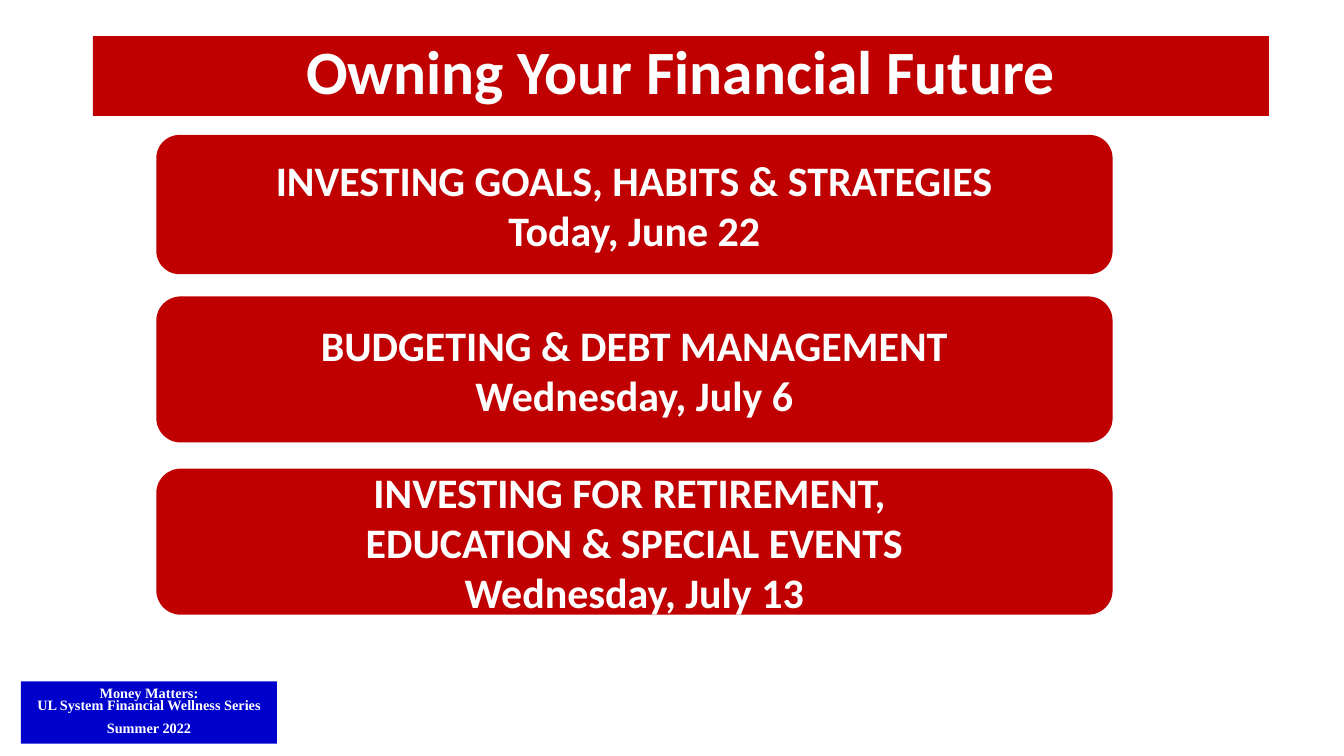
from pptx import Presentation
from pptx.dml.color import RGBColor
from pptx.enum.shapes import MSO_SHAPE
from pptx.enum.text import MSO_ANCHOR, MSO_AUTO_SIZE, PP_ALIGN
from pptx.util import Cm, Pt

RED = RGBColor(0xC0, 0x00, 0x00)
BLUE = RGBColor(0x00, 0x00, 0xCC)
WHITE = RGBColor(0xFF, 0xFF, 0xFF)
RECT = MSO_SHAPE.RECTANGLE
ROUNDED = MSO_SHAPE.ROUNDED_RECTANGLE
TOP = MSO_ANCHOR.TOP
MIDDLE = MSO_ANCHOR.MIDDLE
NO_AUTOFIT = MSO_AUTO_SIZE.NONE
CENTER = PP_ALIGN.CENTER

TITLE_FONT = {"name": "Calibri", "size": Pt(44), "bold": True}
CARD_FONT = {"name": "Calibri", "size": Pt(30), "bold": True}
FOOTER_FONT = {"name": "Times New Roman", "size": Pt(10.2), "bold": True}


def add_box(s, kind, left, top, width, height, color):
    sp = s.shapes.add_shape(kind, Cm(left), Cm(top), Cm(width), Cm(height))
    sp.shadow.inherit = False
    sp.fill.solid()
    sp.fill.fore_color.rgb = color
    sp.line.fill.background()
    return sp


def write_lines(sp, lines, font, spacing, anchor):
    tf = sp.text_frame
    tf.word_wrap = True
    tf.auto_size = NO_AUTOFIT
    tf.vertical_anchor = anchor
    tf.text = "\n".join(lines)
    for p in tf.paragraphs:
        p.alignment = CENTER
        p.line_spacing = spacing
        p.space_before = Pt(0)
        for r in p.runs:
            r.font.color.rgb = WHITE
            for key, value in font.items():
                setattr(r.font, key, value)


prs = Presentation()
prs.slide_width, prs.slide_height = Cm(33.87), Cm(19.05)
s = prs.slides.add_slide(prs.slide_layouts[5])

title = s.shapes.title
title.left, title.top = Cm(2.34), Cm(0.91)
title.width, title.height = Cm(29.64), Cm(2.01)
title.fill.solid()
title.fill.fore_color.rgb = RED
write_lines(title, ["Owning Your Financial Future"], TITLE_FONT, 0.9, TOP)

sessions = [
    (3.4, 3.51, "INVESTING GOALS, HABITS & STRATEGIES", "Today, June 22"),
    (7.47, 3.68, "BUDGETING & DEBT MANAGEMENT", "Wednesday, July 6"),
    (11.81, 3.68, "INVESTING FOR RETIREMENT, \vEDUCATION & SPECIAL EVENTS", "Wednesday, July 13"),
]
for top, height, topic, date in sessions:
    card = add_box(s, ROUNDED, 3.94, top, 24.1, height, RED)
    write_lines(card, [topic, date], CARD_FONT, 1.0, MIDDLE)

footer = add_box(s, RECT, 0.53, 17.17, 6.45, 1.57, BLUE)
footer_lines = ["Money Matters:", "UL System Financial Wellness Series", "Summer 2022"]
write_lines(footer, footer_lines, FOOTER_FONT, 0.7, MIDDLE)
footer.text_frame.paragraphs[-1].space_before = Pt(8.2)

prs.save("out.pptx")
